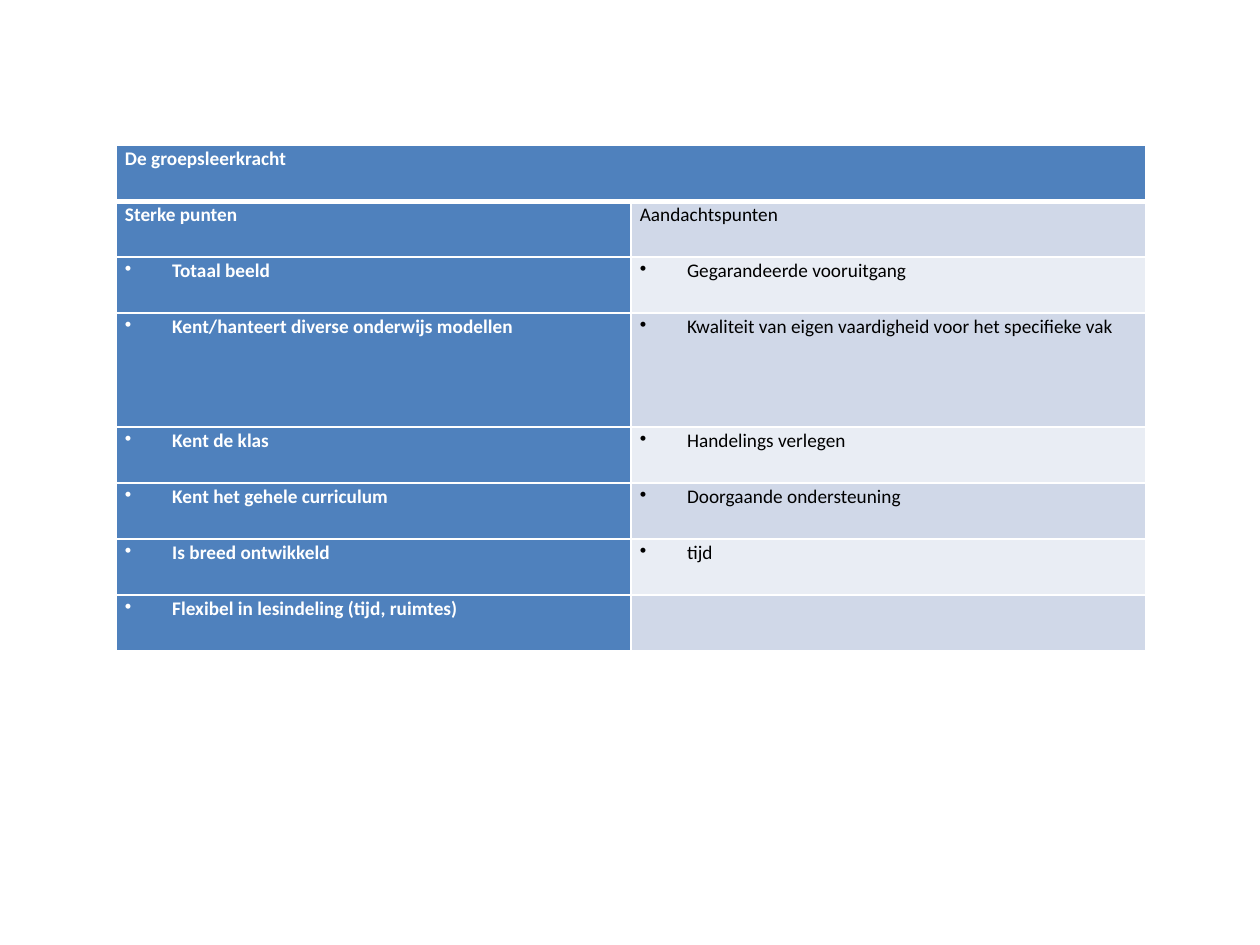
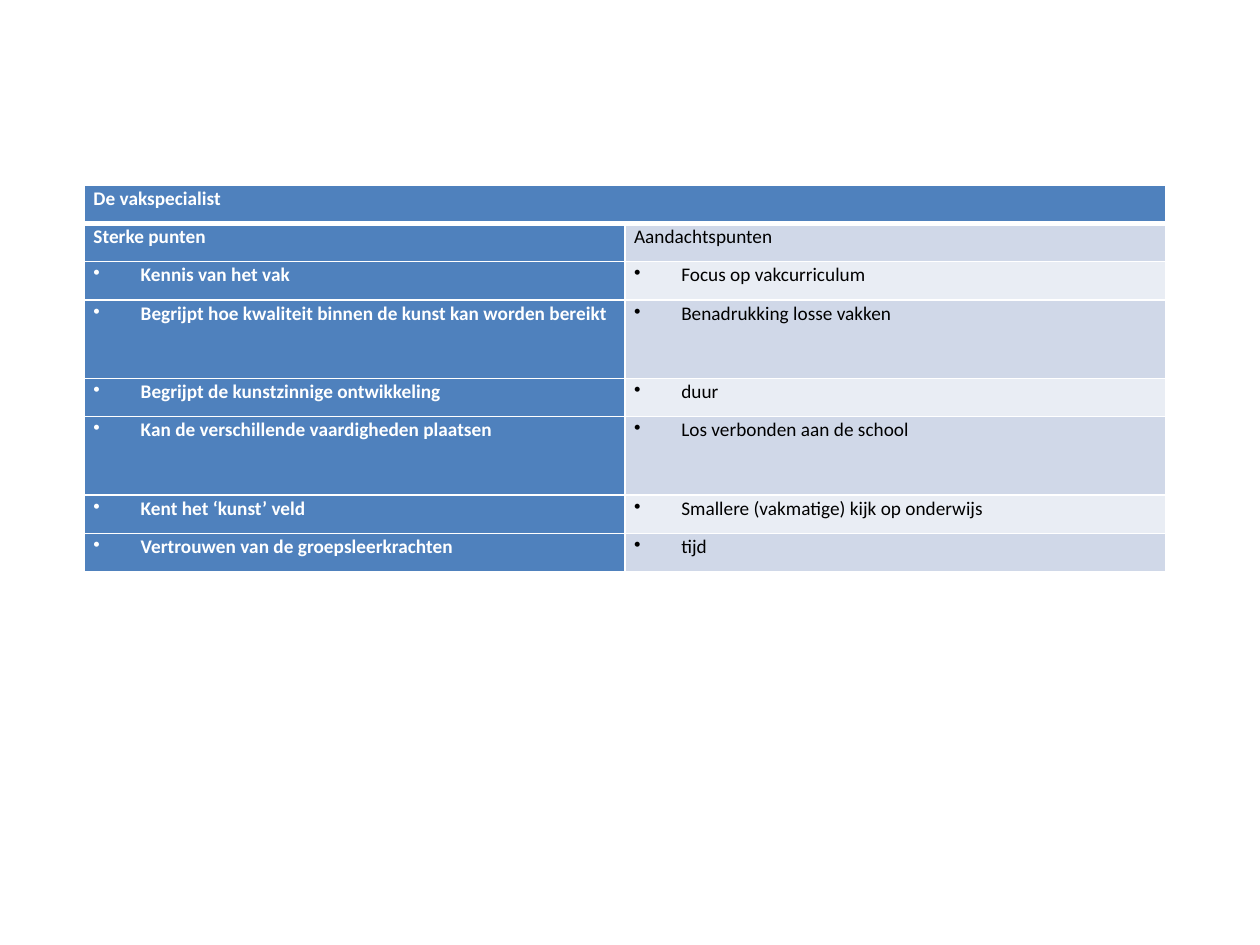
from lxml import etree
from pptx import Presentation
from pptx.dml.color import RGBColor
from pptx.oxml.ns import qn
from pptx.util import Pt

WHITE = RGBColor(0xFF, 0xFF, 0xFF)
BLACK = RGBColor(0x00, 0x00, 0x00)
BLUE = RGBColor(0x4F, 0x81, 0xBD)
BANDS = (RGBColor(0xD0, 0xD8, 0xE8), RGBColor(0xE9, 0xED, 0xF4))

FONT = "Calibri"
FONT_SIZE = 11
LINE_SPACING = 1.07
BULLET_INDENT = 27
SIDE_MARGIN = 5.04
BLANK_LAYOUT = 6
COLUMN_HEADS = ("Sterke punten", "Aandachtspunten")

TEACHERS = [
    {
        "title": "De groepsleerkracht",
        "left": 66.4, "top": 83, "column_width": 294.2,
        "row_height": 32, "tall_height": 65.2, "tall_rows": {3},
        "points": [
            ("Totaal beeld", "Gegarandeerde vooruitgang"),
            ("Kent/hanteert diverse onderwijs modellen",
             "Kwaliteit van eigen vaardigheid voor het specifieke vak"),
            ("Kent de klas", "Handelings verlegen"),
            ("Kent het gehele curriculum", "Doorgaande ondersteuning"),
            ("Is breed ontwikkeld", "tijd"),
            ("Flexibel in lesindeling (tijd, ruimtes)", ""),
        ],
    },
    {
        "title": "De vakspecialist",
        "left": 48.4, "top": 105.8, "column_width": 308.9,
        "row_height": 21.9, "tall_height": 44.8, "tall_rows": {3, 5},
        "points": [
            ("Kennis van het vak", "Focus op vakcurriculum"),
            ("Begrijpt hoe kwaliteit binnen de kunst kan worden bereikt",
             "Benadrukking losse vakken"),
            ("Begrijpt de kunstzinnige ontwikkeling", "duur"),
            ("Kan de verschillende vaardigheden plaatsen", "Los verbonden aan de school"),
            ("Kent het ‘kunst’ veld", "Smallere (vakmatige) kijk op onderwijs"),
            ("Vertrouwen van de groepsleerkrachten", "tijd"),
        ],
    },
]


def add_borders(cell, row):
    properties = cell._tc.get_or_add_tcPr()
    for side in "LRTB":
        thick = (row, side) in ((0, "B"), (1, "T"))
        line = etree.SubElement(properties, qn(f"a:ln{side}"), w=str(Pt(3 if thick else 1)))
        fill = etree.SubElement(line, qn("a:solidFill"))
        etree.SubElement(fill, qn("a:srgbClr"), val=str(WHITE))


def add_bullet(paragraph):
    properties = paragraph._p.get_or_add_pPr()
    properties.set("marL", str(Pt(BULLET_INDENT)))
    properties.set("indent", str(-Pt(BULLET_INDENT)))
    spacing = properties.find(qn("a:lnSpc"))
    bullet = etree.Element(qn("a:buChar"), char="•")
    spacing.addnext(bullet)


def fill_cell(cell, text, row, column):
    add_borders(cell, row)
    strong = row == 0 or column == 0
    cell.fill.solid()
    cell.fill.fore_color.rgb = BLUE if strong else BANDS[(row - 1) % 2]
    cell.margin_left = cell.margin_right = Pt(SIDE_MARGIN)
    cell.margin_top = cell.margin_bottom = 0
    paragraph = cell.text_frame.paragraphs[0]
    paragraph.text = text
    paragraph.line_spacing = LINE_SPACING
    paragraph.font.name = FONT
    paragraph.font.size = Pt(FONT_SIZE)
    paragraph.font.bold = strong
    paragraph.font.color.rgb = WHITE if strong else BLACK
    if row > 1 and text:
        add_bullet(paragraph)


def add_teacher_slide(deck, teacher):
    rows = [(teacher["title"], ""), COLUMN_HEADS, *teacher["points"]]
    heights = [teacher["tall_height"] if row in teacher["tall_rows"] else teacher["row_height"]
               for row in range(len(rows))]
    page = deck.slides.add_slide(deck.slide_layouts[BLANK_LAYOUT])
    table = page.shapes.add_table(
        len(rows), 2, Pt(teacher["left"]), Pt(teacher["top"]),
        Pt(2 * teacher["column_width"]), Pt(sum(heights))).table
    table.first_row = table.horz_banding = False
    for column in table.columns:
        column.width = Pt(teacher["column_width"])
    for row, (texts, height) in enumerate(zip(rows, heights)):
        table.rows[row].height = Pt(height)
        for column, text in enumerate(texts):
            fill_cell(table.cell(row, column), text, row, column)
    table.cell(0, 0).merge(table.cell(0, 1))


def main():
    """Build the two slides comparing class teacher and subject specialist."""
    deck = Presentation()
    deck.slide_width, deck.slide_height = Pt(720), Pt(540)
    for teacher in TEACHERS:
        add_teacher_slide(deck, teacher)
    deck.save("out.pptx")


if __name__ == "__main__":
    main()
